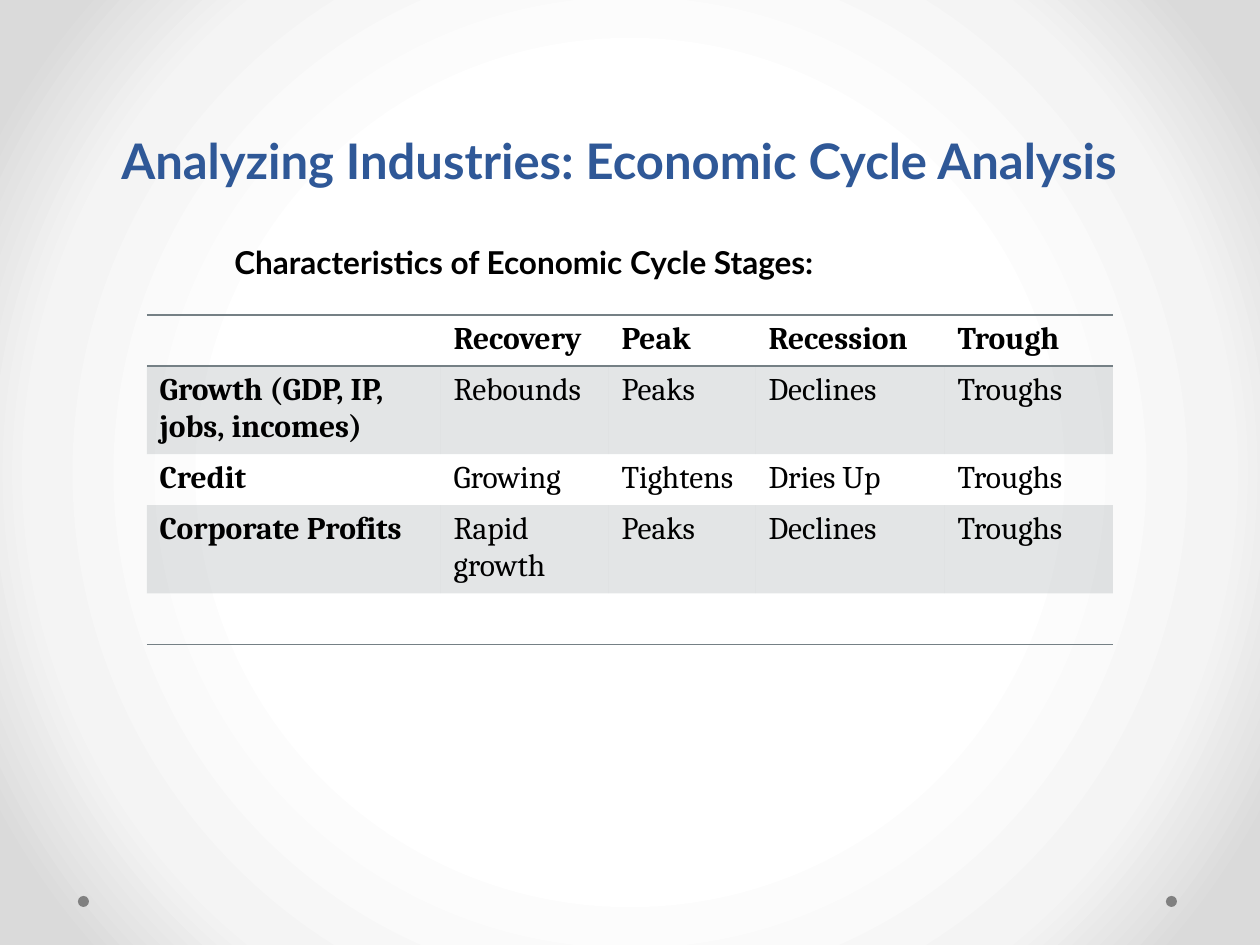
from dataclasses import dataclass

from lxml import etree
from pptx import Presentation
from pptx import util as u
from pptx.dml.color import RGBColor
from pptx.enum import shapes, text
from pptx.oxml import ns, parse_xml

SCALE = u.Inches(1) / 126
COLORS = {
    "title": "2F5897",
    "ink": "000000",
    "slate": "758085",
    "dot": "808080",
    "center": "FFFFFF",
    "middle": "F4F4F4",
    "edge": "DADADA",
}
GRADIENT = [(50, "center"), (76, "middle"), (92, "edge")]
PLAIN_TABLE = "{2D5ABB26-0587-4C30-8999-92F81FD0307C}"
COLUMNS = [294, 168, 147, 189, 168]
ROW_HEIGHT = 51
STAGES = [
    ["", "Recovery", "Peak", "Recession", "Trough"],
    ["Growth (GDP, IP, jobs, incomes)", "Rebounds", "Peaks", "Declines", "Troughs"],
    ["Credit", "Growing", "Tightens", "Dries Up", "Troughs"],
    ["Corporate Profits", "Rapid growth", "Peaks", "Declines", "Troughs"],
    ["", "", "", "", ""],
]


@dataclass(frozen=True)
class Frame:
    left: int
    top: int
    width: int
    height: int

    def emu(self) -> list[int]:
        return [px(n) for n in (self.left, self.top, self.width, self.height)]


@dataclass(frozen=True)
class Style:
    face: str
    size: int
    color: str
    bold: bool = True


TITLE = Style("Lato", 28, "title")
SUBTITLE = Style("Lato", 18, "ink")
HEADING = Style("Cambria", 18, "ink")
BODY = Style("Cambria", 18, "ink", False)
DOTS = [Frame(left, 896, 11, 11) for left in (1166, 78)]


def px(length: int) -> int:
    return round(length * SCALE)


def rgb(name: str) -> RGBColor:
    return RGBColor.from_string(COLORS[name])


def write(para, words: str, style: Style) -> None:
    para.text = words
    para.font.name = style.face
    para.font.size = u.Pt(style.size)
    para.font.bold = style.bold
    para.font.color.rgb = rgb(style.color)


def paint_background(page) -> None:
    page.background.fill.solid()
    solid = page.element.find(".//" + ns.qn("p:bgPr")).find(ns.qn("a:solidFill"))
    stops = "".join(
        f'<a:gs pos="{at * 1000}"><a:srgbClr val="{COLORS[name]}"/></a:gs>'
        for at, name in GRADIENT
    )
    gradient = parse_xml(
        f'<a:gradFill {ns.nsdecls("a")} rotWithShape="1"><a:gsLst>{stops}</a:gsLst>'
        '<a:path path="circle"><a:fillToRect l="50000" t="50000" r="50000" b="50000"/>'
        "</a:path></a:gradFill>"
    )
    solid.getparent().replace(solid, gradient)


def add_dot(page, frame: Frame) -> None:
    dot = page.shapes.add_shape(shapes.MSO_SHAPE.OVAL, *frame.emu())
    dot.shadow.inherit = False
    dot.fill.solid()
    dot.fill.fore_color.rgb = rgb("dot")
    dot.line.fill.background()


def set_title(page, frame: Frame, words: str) -> None:
    title = page.shapes.title
    title.left, title.top, title.width, title.height = frame.emu()
    title.text_frame.vertical_anchor = text.MSO_ANCHOR.BOTTOM
    title.text_frame.auto_size = text.MSO_AUTO_SIZE.NONE
    para = title.text_frame.paragraphs[0]
    write(para, words, TITLE)
    para.alignment = text.PP_ALIGN.CENTER
    para.line_spacing = u.Pt(58)


def add_subtitle(page, frame: Frame, words: str) -> None:
    box = page.shapes.add_textbox(*frame.emu())
    box.text_frame.word_wrap = True
    box.text_frame.auto_size = text.MSO_AUTO_SIZE.SHAPE_TO_FIT_TEXT
    write(box.text_frame.paragraphs[0], words, SUBTITLE)


def fill_cell(cell, shaded: bool) -> None:
    if not shaded:
        cell.fill.background()
        return
    cell.fill.solid()
    cell.fill.fore_color.rgb = rgb("slate")
    color = cell._tc.tcPr.find(".//" + ns.qn("a:srgbClr"))
    etree.SubElement(color, ns.qn("a:alpha"), val="20000")


def add_border(cell, side: str) -> None:
    line = parse_xml(
        f'<a:ln{side} {ns.nsdecls("a")} w="{u.Pt(1)}"><a:solidFill>'
        f'<a:srgbClr val="{COLORS["slate"]}"/></a:solidFill></a:ln{side}>'
    )
    cell._tc.get_or_add_tcPr().insert(0, line)


def add_stage_table(page, left: int, top: int) -> None:
    frame = Frame(left, top, sum(COLUMNS), ROW_HEIGHT * len(STAGES))
    table = page.shapes.add_table(len(STAGES), len(COLUMNS), *frame.emu()).table
    table._tbl.tblPr.find(ns.qn("a:tableStyleId")).text = PLAIN_TABLE
    table.horz_banding = False
    for column, width in zip(table.columns, COLUMNS):
        column.width = px(width)
    for i, words in enumerate(STAGES):
        table.rows[i].height = px(ROW_HEIGHT)
        for j, word in enumerate(words):
            cell = table.cell(i, j)
            style = HEADING if i == 0 or j == 0 else BODY
            write(cell.text_frame.paragraphs[0], word, style)
            fill_cell(cell, shaded=i % 2 == 1)
            if i in (0, len(STAGES) - 1):
                add_border(cell, "B")
            if i == 0:
                add_border(cell, "T")


def main() -> None:
    deck = Presentation()
    deck.slide_width, deck.slide_height = px(1260), px(945)
    page = deck.slides.add_slide(deck.slide_layouts[5])
    paint_background(page)
    for frame in DOTS:
        add_dot(page, frame)
    set_title(page, Frame(10, 38, 1218, 158), "Analyzing Industries: Economic Cycle Analysis")
    add_subtitle(page, Frame(222, 237, 683, 50), "Characteristics of Economic Cycle Stages:")
    add_stage_table(page, 147, 315)
    deck.save("out.pptx")


if __name__ == "__main__":
    main()
